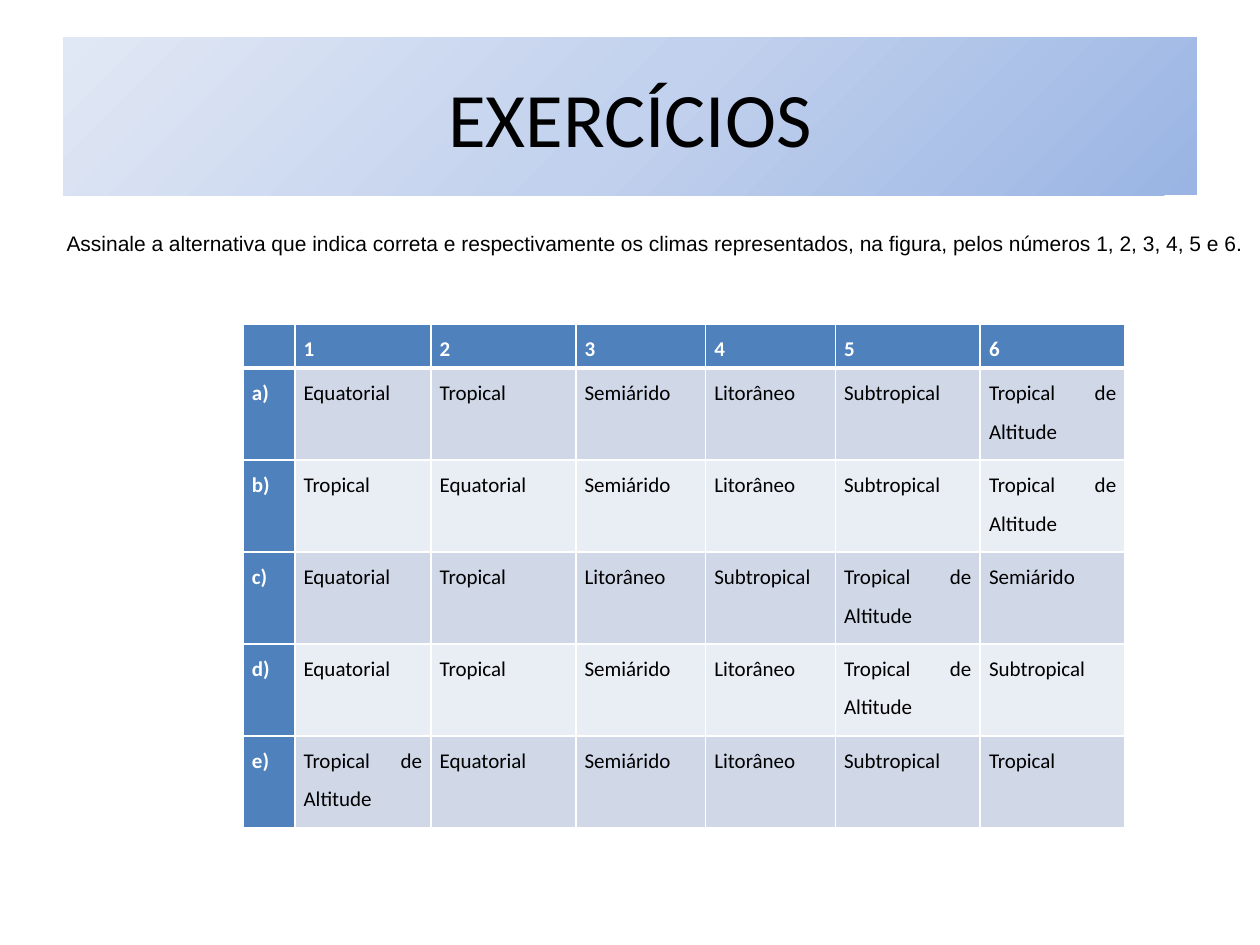
from lxml import etree
from pptx import Presentation
from pptx import util as u
from pptx.dml.color import RGBColor
from pptx.enum import text
from pptx.oxml import ns

WIDTH, HEIGHT = 10, 7.5
BLUE, WHITE, BLACK = "4F81BD", "FFFFFF", "000000"
BANDS = ("D0D8E8", "E9EDF4")
BANNER_STOPS = ((0, "9AB5E4"), (50, "C2D1ED"), (100, "E1E8F5"))

EQ, TR, SA, LI, SU, TA = ("Equatorial", "Tropical", "Semiárido", "Litorâneo",
                          "Subtropical", "Tropical de Altitude")
ANSWERS = [
    ("", "1", "2", "3", "4", "5", "6"),
    ("a)", EQ, TR, SA, LI, SU, TA),
    ("b)", TR, EQ, SA, LI, SU, TA),
    ("c)", EQ, TR, LI, SU, TA, SA),
    ("d)", EQ, TR, SA, LI, TA, SU),
    ("e)", TA, EQ, SA, LI, SU, TR),
]
COLUMN_WIDTHS = (0.41, 1.08, 1.15, 1.03, 1.03, 1.15, 1.15)
ROW_HEIGHTS = (0.35,) + (0.73,) * 5


def rgb(value):
    return RGBColor.from_string(value)


def write(frame, words, size=12, font="Calibri", color=BLACK, bold=False,
          align=text.PP_ALIGN.LEFT, spacing=None):
    paragraph = frame.paragraphs[0]
    paragraph.alignment = align
    paragraph.line_spacing = spacing
    run = paragraph.add_run()
    run.text = words
    run.font.size = u.Pt(size)
    run.font.name = font
    run.font.bold = bold
    run.font.color.rgb = rgb(color)


def add_gradient(fill, stops, angle):
    fill.gradient()
    fill.gradient_angle = angle
    stop_list = fill._xPr.find(ns.qn("a:gradFill")).find(ns.qn("a:gsLst"))
    for old_stop in list(stop_list):
        stop_list.remove(old_stop)
    for position, color in stops:
        stop = etree.SubElement(stop_list, ns.qn("a:gs"), pos=str(position * 1000))
        etree.SubElement(stop, ns.qn("a:srgbClr"), val=color)


def add_borders(cell, bottom=1):
    properties = cell._tc.get_or_add_tcPr()
    sides = (("a:lnL", 1), ("a:lnR", 1), ("a:lnT", 1), ("a:lnB", bottom))
    for index, (side, points) in enumerate(sides):
        line = etree.Element(ns.qn(side), w=str(u.Pt(points)))
        solid = etree.SubElement(line, ns.qn("a:solidFill"))
        etree.SubElement(solid, ns.qn("a:srgbClr"), val=WHITE)
        properties.insert(index, line)


def add_banner(slide):
    banner = slide.shapes.title
    banner.left, banner.top = u.Inches(0.05 * WIDTH), u.Inches(0.04 * HEIGHT)
    banner.width, banner.height = u.Inches(0.9 * WIDTH), u.Inches(1.25)
    add_gradient(banner.fill, BANNER_STOPS, 135)
    banner.text_frame.vertical_anchor = text.MSO_ANCHOR.MIDDLE
    write(banner.text_frame, "EXERCÍCIOS", size=44, align=text.PP_ALIGN.CENTER)


def add_question(slide, words):
    left = 0.43
    question = slide.shapes.add_textbox(u.Inches(left), u.Inches(1.78),
                                        u.Inches(WIDTH - left), u.Inches(0.5))
    question.text_frame.word_wrap = False
    write(question.text_frame, words, font="Arial")


def format_cell(cell, words, row, column):
    heading = row == 0 or column == 0
    cell.margin_left = cell.margin_right = u.Inches(0.07)
    cell.margin_top = cell.margin_bottom = 0
    cell.fill.solid()
    cell.fill.fore_color.rgb = rgb(BLUE if heading else BANDS[(row - 1) % 2])
    add_borders(cell, bottom=3 if row == 0 else 1)
    if words:
        write(cell.text_frame, words, color=WHITE if heading else BLACK,
              bold=heading, align=text.PP_ALIGN.JUSTIFY, spacing=1.5)


def add_answers(slide):
    answers = slide.shapes.add_table(
        len(ROW_HEIGHTS), len(COLUMN_WIDTHS), u.Inches(1.93), u.Inches(2.57),
        u.Inches(sum(COLUMN_WIDTHS)), u.Inches(sum(ROW_HEIGHTS))).table
    for column, width in zip(answers.columns, COLUMN_WIDTHS):
        column.width = u.Inches(width)
    for row, height in zip(answers.rows, ROW_HEIGHTS):
        row.height = u.Inches(height)
    for r, climates in enumerate(ANSWERS):
        for c, climate in enumerate(climates):
            format_cell(answers.cell(r, c), climate, r, c)


def main():
    deck = Presentation()
    deck.slide_width, deck.slide_height = u.Inches(WIDTH), u.Inches(HEIGHT)
    slide = deck.slides.add_slide(deck.slide_layouts[5])  # title only
    add_banner(slide)
    add_answers(slide)
    add_question(slide, "Assinale a alternativa que indica correta e respectivamente "
                        "os climas representados, na figura, pelos números "
                        "1, 2, 3, 4, 5 e 6.")
    deck.save("out.pptx")


if __name__ == "__main__":
    main()
